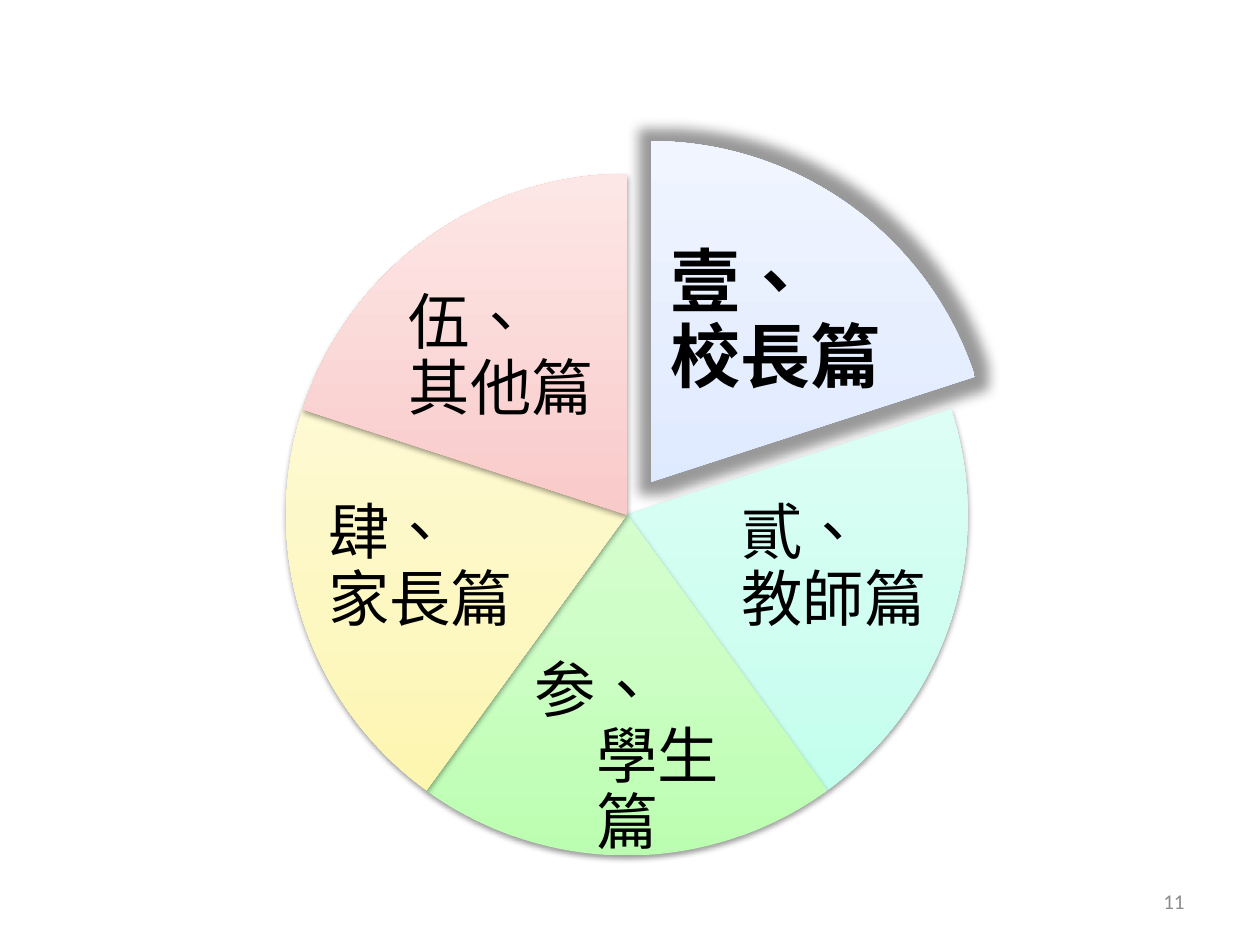
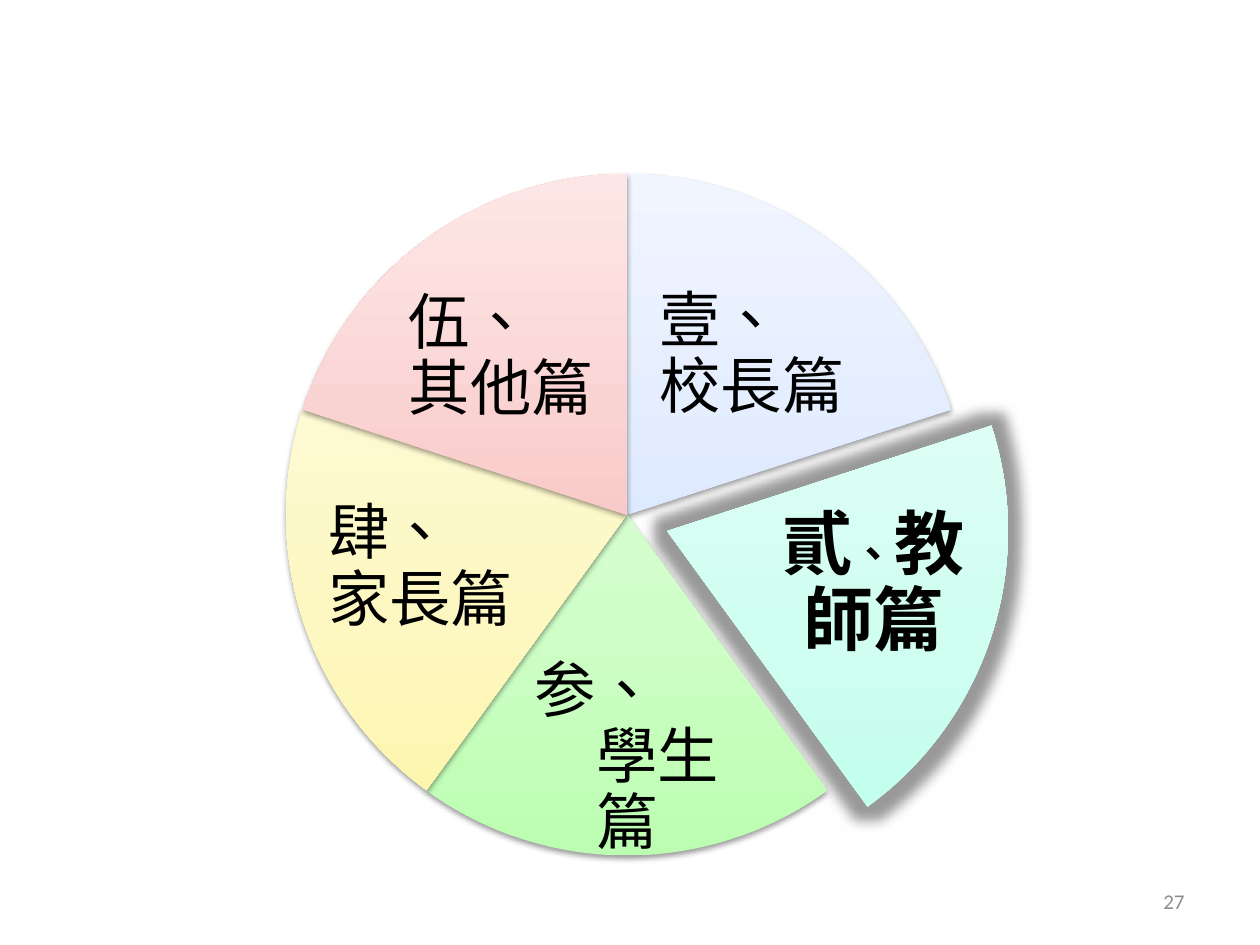
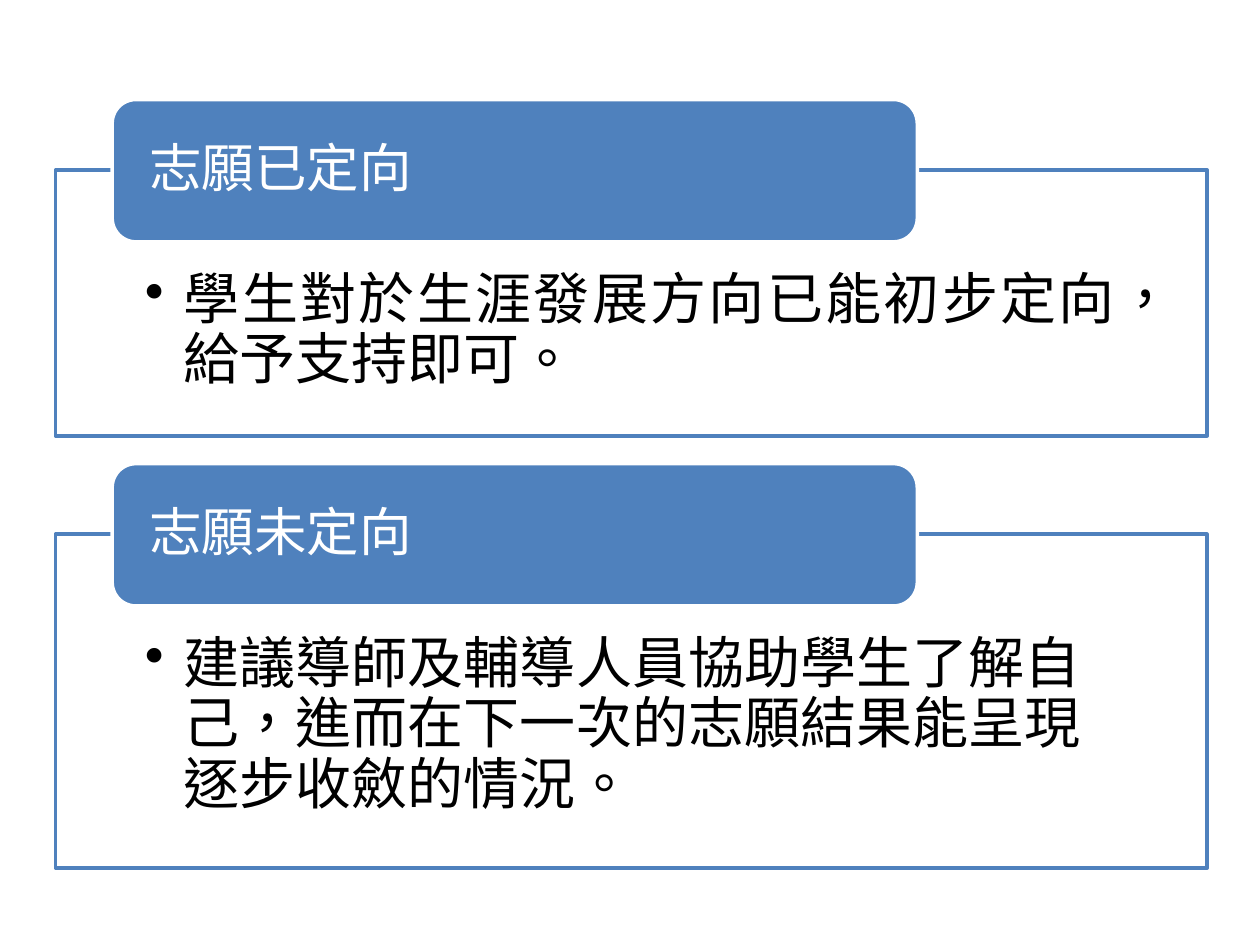
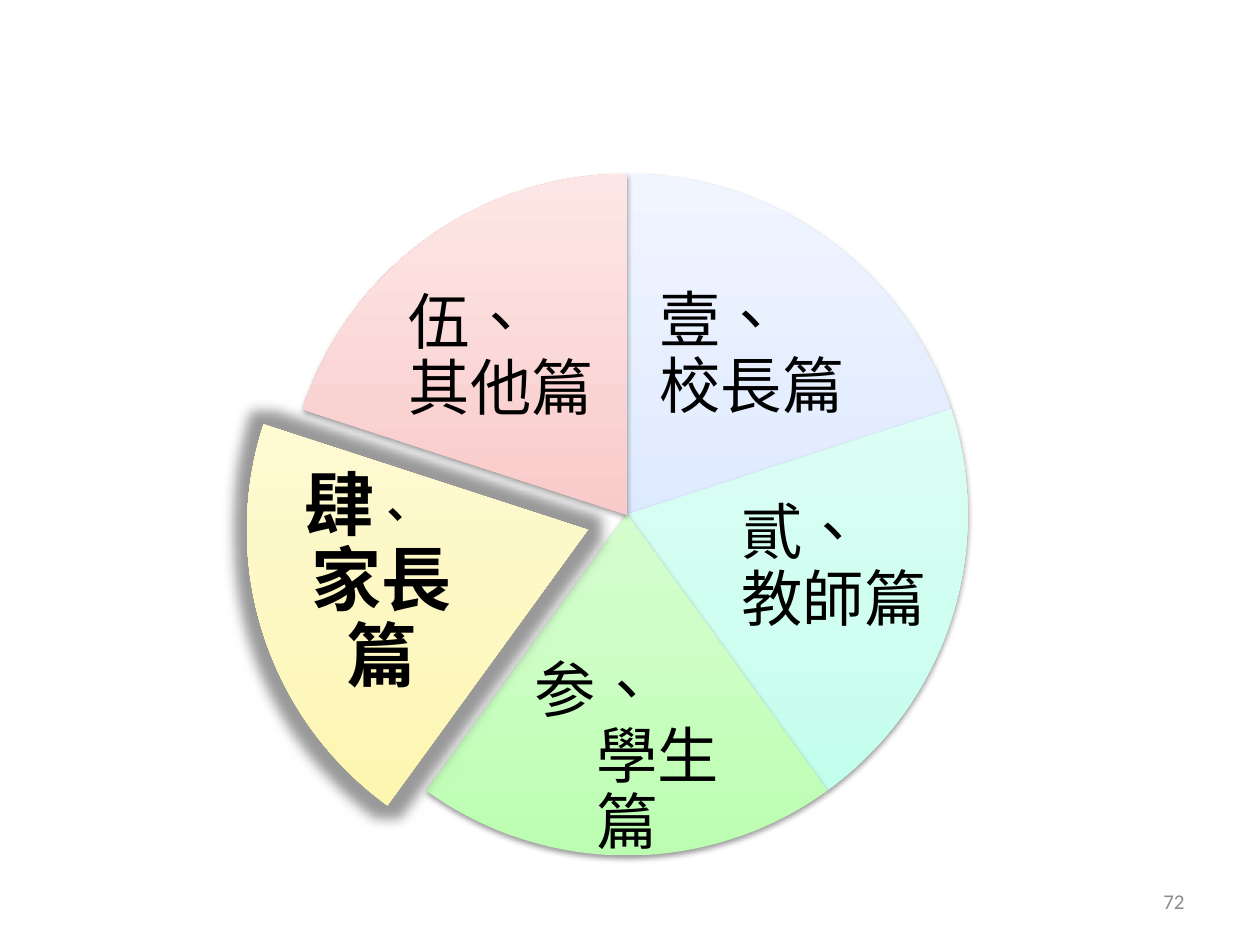
from pptx import Presentation
from pptx.dml.color import RGBColor
from pptx.enum.lang import MSO_LANGUAGE_ID
from pptx.enum.shapes import MSO_SHAPE
from pptx.enum.text import MSO_ANCHOR, PP_ALIGN
from pptx.oxml import parse_xml
from pptx.oxml.ns import nsdecls
from pptx.util import Emu, Pt

SCALE = 9144
HUES = {"ink": "000000", "paper": "FFFFFF", "blue": "4F81BD", "gray": "8C8C8C"}
FADES = [
    ("CCDEFF", "DAE7FF", "F0F5FF"),
    ("BDFFEC", "D0FEF1", "EDFFF9"),
    ("BCFEB1", "CFFEC8", "ECFFE9"),
    ("FDF5A8", "FDF7C2", "FFFDE7"),
    ("F6A7A6", "F7C2C1", "FDE7E6"),
]
PARTS = [
    ("壹、　校長篇", (505, 219, 183, 126)),
    ("貳、　教師篇", (581, 383, 161, 136)),
    ("参、　\n　學生篇", (401, 544, 193, 116)),
    ("肆、　家長篇", (253, 383, 161, 136)),
    ("伍、　其他篇", (306, 221, 183, 126)),
]
WHEEL = (227, 138, 541, 541)
START, SWEEP, TURN = 162, 43.2, 216
SHADOW = ('<a:outerShdw {} blurRad="40000" dist="20000" dir="5400000" rotWithShape="0">'
          '<a:srgbClr val="000000"><a:alpha val="38000"/></a:srgbClr></a:outerShdw>')
GLOW = ('<a:glow {} rad="177800"><a:srgbClr val="000000">'
        '<a:alpha val="40000"/></a:srgbClr></a:glow>')


def px(*nums):
    """Turn px into EMU."""
    return [Emu(round(num * SCALE)) for num in nums]


def node(text):
    """Build a drawing element, with its namespace put in the braces."""
    return parse_xml(text.format(nsdecls("a")))


class Deck:
    """Hold the style and the current slide."""

    def __init__(self):
        """Start an empty 4:3 deck."""
        self.file = Presentation()
        self.file.slide_width, self.file.slide_height = px(1000, 750)
        self.font = "Calibri"
        self.slide = None

    def page(self, num=None):
        """Add a blank slide, with a page number if given."""
        self.slide = self.file.slides.add_slide(self.file.slide_layouts[6])
        if num:
            box = self.slide.shapes.add_textbox(*px(717, 695, 233, 40))
            self.label(box, [(str(num), 12)], "gray", PP_ALIGN.RIGHT, (10, 5, 10, 5))

    def label(self, shape, runs, hue="ink", align=PP_ALIGN.LEFT, pad=(5, 5, 5, 5),
              bold=False, after=0, dot=False):
        """Fill a shape with one paragraph of (text, size) runs."""
        frame = shape.text_frame
        frame.word_wrap = True
        frame.vertical_anchor = MSO_ANCHOR.TOP if dot else MSO_ANCHOR.MIDDLE
        (frame.margin_left, frame.margin_top,
         frame.margin_right, frame.margin_bottom) = px(*pad)
        para = frame.paragraphs[0]
        para.alignment = align
        props = para._p.get_or_add_pPr()
        if after:
            para.line_spacing = 0.9
            props.append(node(f'<a:spcAft {{}}><a:spcPct val="{after * 1000}"/></a:spcAft>'))
        if dot:
            para.level = 1
            props.set("marL", str(px(31)[0]))
            props.set("indent", str(px(-31)[0]))
            props.append(node('<a:buChar {} char="•"/>'))
        if len(runs) == 1:
            para.text = runs[0][0]
        else:
            for text, size in runs:
                para.add_run().text = text
        for i, run in enumerate(para.runs):
            font = run.font
            font.name, font.bold = self.font, bold
            font.size = Pt(runs[min(i, len(runs) - 1)][1])
            font.color.rgb = RGBColor.from_string(HUES[hue])
            font.language_id = MSO_LANGUAGE_ID.TRADITIONAL_CHINESE

    def slice(self, i, shift=(0, 0), runs=None):
        """Draw one wedge and its label, pulled out when it has its own runs."""
        def move(left, top, wide, high):
            return px(left + shift[0], top + shift[1], wide, high)

        text, spot = PARTS[i]
        wedge = self.slide.shapes.add_shape(MSO_SHAPE.PIE, *move(*WHEEL))
        for k in range(2):
            wedge.adjustments[k] = round((START + SWEEP * (i + k)) % TURN, 1)
        wedge.line.fill.background()
        wedge.fill.gradient()
        wedge.shadow.inherit = False
        props = wedge._element.spPr
        stops = "".join(f'<a:gs pos="{pos}000"><a:srgbClr val="{hue}"/></a:gs>'
                        for pos, hue in zip((0, 35, 100), FADES[i]))
        props.replace(props.gradFill, node(
            f'<a:gradFill {{}} rotWithShape="1"><a:gsLst>{stops}</a:gsLst>'
            '<a:lin ang="16200000" scaled="0"/></a:gradFill>'))
        props.effectLst.append(node(GLOW if runs else SHADOW))
        box = self.slide.shapes.add_textbox(*move(*spot))
        self.label(box, runs or [(text, 35)], "ink", PP_ALIGN.CENTER,
                   (6,) * 4 if runs else (5,) * 4, bool(runs), 35)

    def wheel(self, num, pick, shift, runs):
        """Add a slide with the wheel and one picked wedge."""
        self.page(num)
        for i in range(len(PARTS)):
            if i == pick:
                self.slice(i, shift, runs)
            else:
                self.slice(i)

    def panel(self, shape, spot, fill, line):
        """Draw a filled and outlined shape."""
        item = self.slide.shapes.add_shape(shape, *px(*spot))
        item.shadow.inherit = False
        item.fill.solid()
        item.fill.fore_color.rgb = RGBColor.from_string(HUES[fill])
        item.line.color.rgb = RGBColor.from_string(HUES[line])
        item.line.width = Pt(2)
        return item

    def card(self, top, high, head, body, align):
        """Draw a framed note with a title tab on its edge."""
        frame = self.panel(MSO_SHAPE.RECTANGLE, (44, top, 914, high), "paper", "blue")
        tint = frame._element.spPr.solidFill.srgbClr
        tint.append(node('<a:alpha {} val="90000"/>'))
        self.label(frame, [(body, 32)], "ink", align, (71, 80, 71, 25), after=15, dot=True)
        tab = self.panel(MSO_SHAPE.ROUNDED_RECTANGLE, (89, top - 56, 639, 113),
                         "blue", "paper")
        self.label(tab, [(head, 30)], "paper", pad=(24, 0, 24, 0), after=35)


def main():
    """Build the four slides."""
    deck = Deck()
    deck.wheel(11, 0, (19, -26), [("壹、　校長篇", 40)])
    deck.wheel(27, 1, (32, 13), [("貳", 40), ("、", 24), ("教師篇", 40)])
    deck.page()
    deck.card(135, 211, "志願已定向",
              "學生對於生涯發展方向已能初步定向，給予支持即可。", PP_ALIGN.JUSTIFY)
    deck.card(424, 265, "志願未定向",
              "建議導師及輔導人員協助學生了解自己，進而在下一次的志願結果能呈現逐步收斂的情況。",
              PP_ALIGN.LEFT)
    deck.wheel(72, 3, (-31, 12), [("肆", 40), ("、　", 24), ("家長篇", 40)])
    deck.file.save("out.pptx")


if __name__ == "__main__":
    main()
